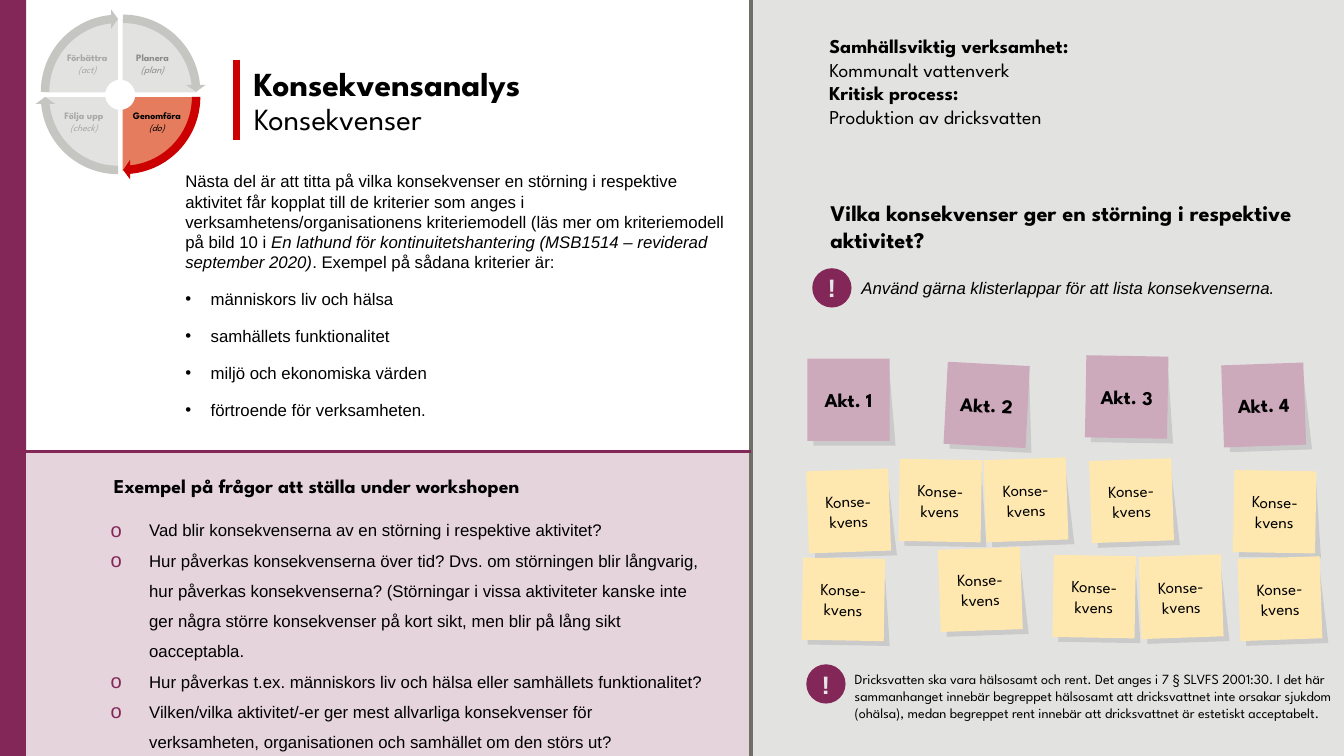
from copy import deepcopy
from math import asin, cos, pi, sin

from lxml.etree import SubElement
from pptx import Presentation
from pptx.dml.color import RGBColor
from pptx.enum.shapes import MSO_CONNECTOR, MSO_SHAPE as Shape
from pptx.enum.text import MSO_ANCHOR as Anchor, MSO_AUTO_SIZE as AutoSize, PP_ALIGN as Align
from pptx.oxml.ns import qn
from pptx.util import Cm, Pt

PLUM, RED, GREY, ARROW_GREY, YELLOW, MAUVE = "822757", "CC0000", "E2E2E1", "C5C5C2", "FEE8B0", "CDA9BC"
BOLD, PLAIN, ITALIC = {"bold": True}, {"bold": False}, {"italic": True}
CENTRED = {"alignment": Align.CENTER}


def color(value):
    return RGBColor.from_string(value)


class WorkshopSlide:
    """Draws the elements of a workshop slide in one shared style."""

    heading_font = "League Spartan"
    body_font = "Arial"

    def __init__(self, presentation):
        self.slide = presentation.slides.add_slide(presentation.slide_layouts[6])
        self.shapes = self.slide.shapes

    def paint(self, shape, fill):
        shape.shadow.inherit = False
        shape.fill.solid()
        shape.fill.fore_color.rgb = color(fill)
        shape.line.fill.background()
        return shape

    def block(self, box, fill, kind=Shape.RECTANGLE):
        return self.paint(self.shapes.add_shape(kind, *map(Cm, box)), fill)

    def polygon(self, points, fill):
        start, *rest = [(Cm(x), Cm(y)) for x, y in points]
        builder = self.shapes.build_freeform(*start)
        builder.add_line_segments(rest, close=True)
        return self.paint(builder.convert_to_shape(), fill)

    def line(self, start, end, stroke, width):
        connector = self.shapes.add_connector(MSO_CONNECTOR.STRAIGHT, *map(Cm, start + end))
        connector.line.color.rgb = color(stroke)
        connector.line.width = Pt(width)
        SubElement(connector._element.spPr, qn("a:effectLst"))

    def bullet(self, paragraph, character, indent, fill, percent):
        properties = paragraph._p.get_or_add_pPr()
        properties.set("marL", str(Cm(indent)))
        properties.set("indent", str(-Cm(indent)))
        SubElement(SubElement(properties, qn("a:buClr")), qn("a:srgbClr"), val=fill)
        SubElement(properties, qn("a:buSzPct"), val=str(percent * 1000))
        SubElement(properties, qn("a:buFont"), typeface=self.body_font)
        SubElement(properties, qn("a:buChar"), char=character)

    def put_text(self, shape, paragraphs, size, font, fill="000000", layout=None, frame=None):
        text_frame = shape.text_frame
        for name, value in {"word_wrap": True, **(frame or {})}.items():
            setattr(text_frame, name, value)
        for index, content in enumerate(paragraphs):
            paragraph = text_frame.add_paragraph() if index else text_frame.paragraphs[0]
            if "bullet" in content:
                self.bullet(paragraph, *content["bullet"])
            for name, value in (layout or {}).items():
                setattr(paragraph, name, value)
            for text, style in content["runs"]:
                for number, part in enumerate(text.split("\n")):
                    if number:
                        paragraph.add_line_break()
                        paragraph._p[-1].append(deepcopy(run._r.rPr))
                    if part:
                        run = paragraph.add_run()
                        run.text = part
                        for name, value in {"size": Pt(size), "name": font, **style}.items():
                            setattr(run.font, name, value)
                        run.font.color.rgb = color(fill)

    def text(self, box, paragraphs, size, font, frame=None, **options):
        frame = {"auto_size": AutoSize.SHAPE_TO_FIT_TEXT, **(frame or {})}
        self.put_text(self.shapes.add_textbox(*map(Cm, box)), paragraphs, size, font, frame=frame, **options)

    def badge(self, left, top):
        margins = dict.fromkeys(["margin_left", "margin_top", "margin_right", "margin_bottom"], 0)
        self.put_text(self.block((left, top, 0.99, 0.99), PLUM, Shape.OVAL), [{"runs": [("!", BOLD)]}], 18,
                      self.body_font, "E7E6E6", CENTRED, {"vertical_anchor": Anchor.MIDDLE, **margins})

    def note(self, left, top, angle, label, fill, size, style, margin):
        side = 2.07
        x, y = left + 0.15, top + 0.12
        shadow = self.polygon([(x, y), (x + 1.9, y), (x + side, y + side), (x, y + side)], "000000")
        SubElement(shadow._element.spPr.find(".//" + qn("a:srgbClr")), qn("a:alpha"), val="10000")
        paper = self.block((left, top, side, side), fill)
        shadow.rotation = paper.rotation = angle
        self.put_text(paper, [{"runs": [(label, style)]}], size, self.heading_font, layout=CENTRED,
                      frame={"vertical_anchor": Anchor.MIDDLE, "margin_left": Cm(margin), "margin_right": Cm(margin)})

    def quadrant(self, across, down, fill):
        centre_x, centre_y, gap, radius, hub = 3.03, 2.39, 0.06, 1.86, 0.38
        steps = 24
        edge = asin(gap / hub)
        outer = [pi / 2 * step / steps for step in range(steps + 1)]
        inner = [pi / 2 - edge - (pi / 2 - 2 * edge) * step / steps for step in range(steps + 1)]
        points = [(gap + radius * cos(angle), gap + radius * sin(angle)) for angle in outer]
        points += [(hub * cos(angle), hub * sin(angle)) for angle in inner]
        self.polygon([(centre_x + across * x, centre_y + down * y) for x, y in points], fill)

    def cycle_arrow(self, left, top, start, fill):
        arrow = self.block((left, top, 4.17, 4.17), fill, Shape.CIRCULAR_ARROW)
        for index, value in enumerate([0.051, 3.275, start + 50.725, start, 0.059]):
            arrow.adjustments[index] = value


def main():
    presentation = Presentation()
    presentation.slide_width, presentation.slide_height = Cm(33.87), Cm(19.05)
    page = WorkshopSlide(presentation)
    heading, body = page.heading_font, page.body_font
    spaced = {"space_after": Pt(12)}

    page.block((0, 0, 0.66, 19.05), PLUM)
    page.block((18.92, 0, 14.95, 19.05), GREY)
    page.text((6.15, 1.57, 10.74, 2.11), [{"runs": [("Konsekvensanalys\n", BOLD),
              ("Konsekvenser", {"bold": False, "size": Pt(22)})]}], 24, heading, layout={"line_spacing": 0.9})
    page.line((5.97, 1.5), (5.97, 3.53), RED, 5)

    intro = [
        ("Nästa del är att titta på vilka konsekvenser en störning i respektive aktivitet får kopplat till de "
         "kriterier som anges i verksamhetens/organisationens kriteriemodell (läs mer om kriteriemodell på bild 10 i ",
         {}),
        ("En lathund för kontinuitetshantering (MSB1514 – reviderad september 2020)", ITALIC),
        (". Exempel på sådana kriterier är:", {}),
    ]
    criteria = ["människors liv och hälsa", "samhällets funktionalitet", "miljö och ekonomiska värden",
                "förtroende för verksamheten."]
    page.text((4.42, 4.19, 14.43, 7.09), [{"runs": intro}] + [
        {"runs": [(item, {})], "bullet": ("•", 0.64, "000000", 100)} for item in criteria], 12, body, layout=spaced)

    page.block((0.66, 11.4, 18.29, 7.65), "E6D4DD")
    page.text((2.62, 11.81, 11.81, 0.86), [{"runs": [("Exempel på frågor att ställa under workshopen", BOLD)]}],
              14, heading, frame={"word_wrap": False})
    page.line((18.92, 0), (18.92, 19.05), "6F6E67", 2.5)
    page.line((0.66, 11.38), (18.92, 11.38), PLUM, 2.5)

    page.text((20.65, 0.74, 10.08, 2.64), [{"runs": [
        ("Samhällsviktig verksamhet:\n", BOLD), ("Kommunalt vattenverk\n", PLAIN),
        ("Kritisk process:\n", BOLD), ("Produktion av dricksvatten", PLAIN)]}], 14, heading, layout=spaced)
    page.text((20.68, 4.9, 12.5, 1.63), [{"runs": [
        ("Vilka konsekvenser ger en störning i respektive aktivitet?", BOLD)]}], 16, heading, layout=spaced)
    page.text((21.46, 6.88, 12.4, 0.76), [{"runs": [
        ("Använd gärna klisterlappar för att lista konsekvenserna.", ITALIC)]}], 12, body, layout=spaced)
    page.badge(20.47, 6.76)

    consequences = [
        (20.35, 11.84, 358), (20.22, 14.07, 1), (27.48, 11.58, 358), (26.54, 14, 1), (28.73, 14, 358),
        (31.09, 11.86, 1), (31.22, 14.05, 358), (22.66, 11.58, 1), (24.82, 11.56, 358), (23.67, 13.82, 358),
    ]
    for place in consequences:
        page.note(*place, "Konse-\nkvens", YELLOW, 12, PLAIN, 0)
    activities = [(20.35, 9.04, 0), (23.83, 9.17, 3), (27.36, 8.97, 1), (30.81, 9.17, 358)]
    for number, place in enumerate(activities, 1):
        page.note(*place, f"Akt. {number}", MAUVE, 14, BOLD, 0.25)

    page.text((20.14, 16.56, 13.49, 2.31), [{"runs": [(
        "Dricksvatten ska vara hälsosamt och rent. Det anges i 7 § SLVFS 2001:30. I det här sammanhanget innebär "
        "begreppet hälsosamt att dricksvattnet inte orsakar sjukdom (ohälsa), medan begreppet rent innebär att "
        "dricksvattnet är estetiskt acceptabelt.", {})]}], 10, heading,
        frame={"auto_size": AutoSize.NONE, "vertical_anchor": Anchor.MIDDLE, "margin_left": Cm(1.4),
               "margin_right": 0, "margin_bottom": Cm(0.48)})
    page.badge(20.32, 16.74)

    questions = [
        "Vad blir konsekvenserna av en störning i respektive aktivitet?",
        "Hur påverkas konsekvenserna över tid? Dvs. om störningen blir långvarig, hur påverkas konsekvenserna? "
        "(Störningar i vissa aktiviteter kanske inte ger några större konsekvenser på kort sikt, men blir på lång "
        "sikt oacceptabla.",
        "Hur påverkas t.ex. människors liv och hälsa eller samhällets funktionalitet?",
        "Vilken/vilka aktivitet/-er ger mest allvarliga konsekvenser för verksamheten, organisationen och "
        "samhället om den störs ut?",
    ]
    page.text((2.54, 12.73, 15.52, 6.32), [{"runs": [(question, {})], "bullet": ("o", 0.97, PLUM, 120)}
              for question in questions], 12, body, layout={"line_spacing": 1.5})

    for across, down, fill in [(-1, -1, GREY), (-1, 1, GREY), (1, -1, GREY), (1, 1, "E67C5E")]:
        page.quadrant(across, down, fill)
    arrows = [(1.02, 0.23, 162, ARROW_GREY), (1.02, 0.36, 0, RED),
              (0.89, 0.36, 54, ARROW_GREY), (0.89, 0.23, 108, ARROW_GREY)]
    for arrow in arrows:
        page.cycle_arrow(*arrow)
    phases = [
        ("Förbättra", "(act)", 1.4, 1.22, 1.6, "A9A8A4"), ("Följa upp", "(check)", 1.3, 2.67, 1.63, "A9A8A4"),
        ("Genomföra", "(do)", 3, 2.67, 1.91, "000000"), ("Planera", "(plan)", 2.92, 1.22, 1.85, "8C8B85"),
    ]
    for name, step, left, top, width, fill in phases:
        page.text((left, top, width, 0.84), [{"runs": [(name, BOLD)]}, {"runs": [(step, ITALIC)]}], 7, heading,
                  fill=fill, layout={**CENTRED, "line_spacing": 0.9, "space_after": Pt(1)},
                  frame={"word_wrap": False})

    presentation.save("out.pptx")


if __name__ == "__main__":
    main()
